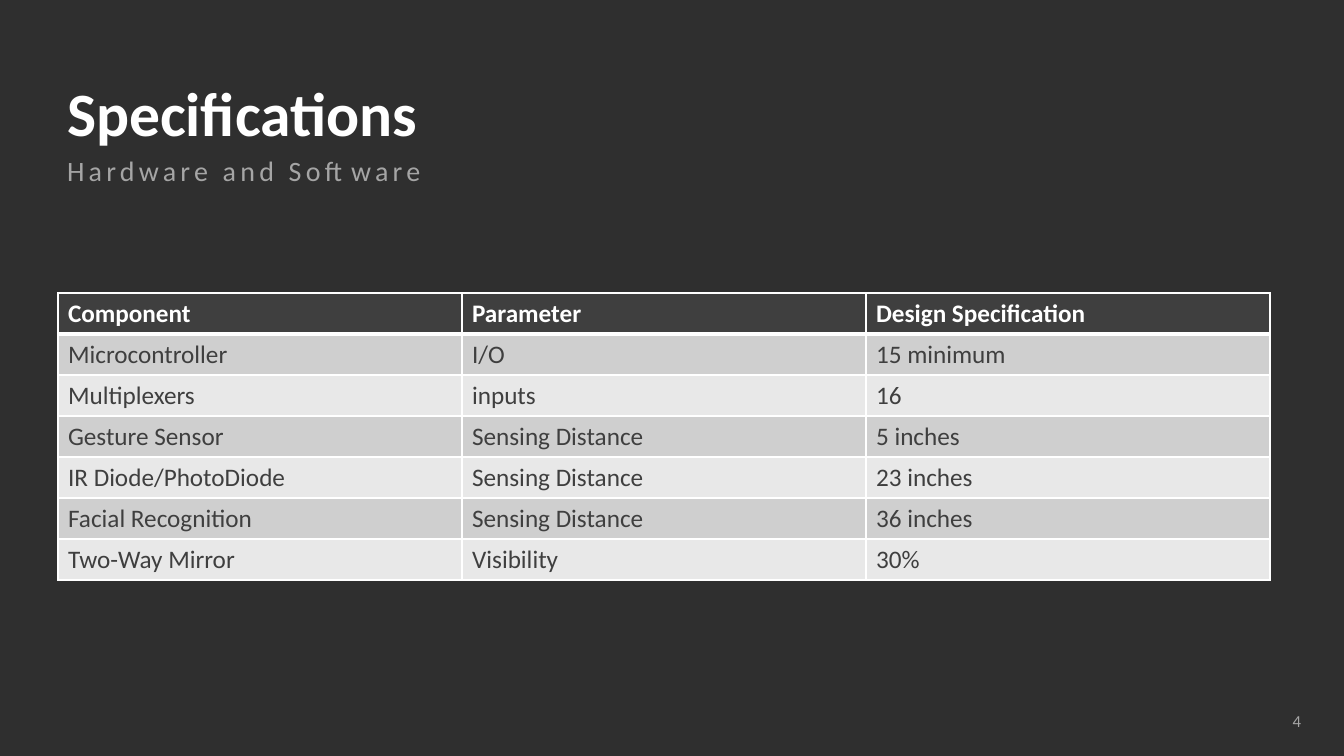
import pptx
import pptx.dml.color
import pptx.enum.text
import pptx.oxml
import pptx.oxml.ns
import pptx.util
from lxml import etree

TITLE = "Specifications"
SUBTITLE = "Hardware and Software"
PAGE_NUMBER = "4"
ROWS = [
    ("Component", "Parameter", "Design Specification"),
    ("Microcontroller", "I/O", "15 minimum"),
    ("Multiplexers", "inputs", "16"),
    ("Gesture Sensor", "Sensing Distance", "5 inches"),
    ("IR Diode/PhotoDiode", "Sensing Distance", "23 inches"),
    ("Facial Recognition", "Sensing Distance", "36 inches"),
    ("Two-Way Mirror", "Visibility", "30%"),
]

COLORS = {
    "background": "2F2F2F",
    "white": "FFFFFF",
    "muted": "A5A5A5",
    "dark": "3F3F3F",
    "odd": "CFCFCF",
    "even": "E8E8E8",
}
FONT = "Calibri"
EMU_PER_PX = 914400 / 100.8
PAGE_SIZE = (1344, 756)
TITLE_BOX = (57, 23, 918, 127)
SUBTITLE_BOX = (57, 152, 812, 68)
NUMBER_BOX = (1229, 701, 82, 40)
TABLE_LEFT, TABLE_TOP = 58, 293
COLUMN_WIDTH, ROW_HEIGHT = 404, 41

ALIGN = pptx.enum.text.PP_ALIGN
ANCHOR = pptx.enum.text.MSO_ANCHOR


def px(length):
    return pptx.util.Emu(round(length * EMU_PER_PX))


def rgb(name):
    return pptx.dml.color.RGBColor.from_string(COLORS[name])


def place(shape, bounds):
    shape.left, shape.top, shape.width, shape.height = map(px, bounds)


def write(frame, text, size, color, bold=False, align=ALIGN.LEFT):
    """Fill a text frame with one formatted paragraph and return it."""
    frame.text = text
    para = frame.paragraphs[0]
    para.alignment = align
    para.font.name = FONT
    para.font.size = pptx.util.Pt(size)
    para.font.bold = bold
    para.font.color.rgb = rgb(color)
    return para


def set_borders(cell, bottom_width):
    properties = cell._tc.get_or_add_tcPr()
    widths = {"lnL": 1, "lnR": 1, "lnT": 1, "lnB": bottom_width}
    for position, (side, width) in enumerate(widths.items()):
        line = etree.Element(pptx.oxml.ns.qn(f"a:{side}"), w=str(pptx.util.Pt(width)))
        fill = etree.SubElement(line, pptx.oxml.ns.qn("a:solidFill"))
        etree.SubElement(fill, pptx.oxml.ns.qn("a:srgbClr"), val=COLORS["white"])
        properties.insert(position, line)


def add_headings(page):
    title = page.shapes.title
    place(title, TITLE_BOX)
    frame = title.text_frame
    frame.auto_size = pptx.enum.text.MSO_AUTO_SIZE.NONE
    frame.vertical_anchor = ANCHOR.BOTTOM
    frame.margin_bottom = 0
    write(frame, TITLE, 44, "white", bold=True).line_spacing = 0.9

    subtitle = page.placeholders[1]
    place(subtitle, SUBTITLE_BOX)
    frame = subtitle.text_frame
    frame.auto_size = pptx.enum.text.MSO_AUTO_SIZE.NONE
    frame.vertical_anchor = ANCHOR.TOP
    para = write(frame, SUBTITLE, 20, "muted")
    para.line_spacing = 0.9
    para.space_before = pptx.util.Pt(10)
    properties = para._p.get_or_add_pPr()
    properties.set("marL", "0")
    properties.set("indent", "0")
    bullet = etree.Element(pptx.oxml.ns.qn("a:buNone"))
    properties.find(pptx.oxml.ns.qn("a:defRPr")).addprevious(bullet)
    para.runs[0].font._element.set("spc", "300")


def add_specifications(page):
    count = len(ROWS[0])
    table = page.shapes.add_table(
        len(ROWS), count, px(TABLE_LEFT), px(TABLE_TOP),
        px(COLUMN_WIDTH * count), px(ROW_HEIGHT * len(ROWS)),
    ).table
    for column in table.columns:
        column.width = px(COLUMN_WIDTH)
    for index, texts in enumerate(ROWS):
        table.rows[index].height = px(ROW_HEIGHT)
        header = index == 0
        band = "dark" if header else "odd" if index % 2 else "even"
        for cell, text in zip(table.rows[index].cells, texts):
            write(cell.text_frame, text, 18, "white" if header else "dark", bold=header)
            cell.fill.solid()
            cell.fill.fore_color.rgb = rgb(band)
            set_borders(cell, bottom_width=3 if header else 1)


def add_page_number(page):
    box = page.shapes.add_textbox(*map(px, NUMBER_BOX))
    box.text_frame.word_wrap = True
    box.text_frame.vertical_anchor = ANCHOR.MIDDLE
    write(box.text_frame, PAGE_NUMBER, 12, "muted", align=ALIGN.RIGHT)


def main():
    deck = pptx.Presentation()
    deck.slide_width, deck.slide_height = map(px, PAGE_SIZE)
    page = deck.slides.add_slide(deck.slide_layouts[1])
    page.background.fill.solid()
    page.background.fill.fore_color.rgb = rgb("background")
    add_headings(page)
    add_specifications(page)
    add_page_number(page)
    deck.save("out.pptx")


if __name__ == "__main__":
    main()
